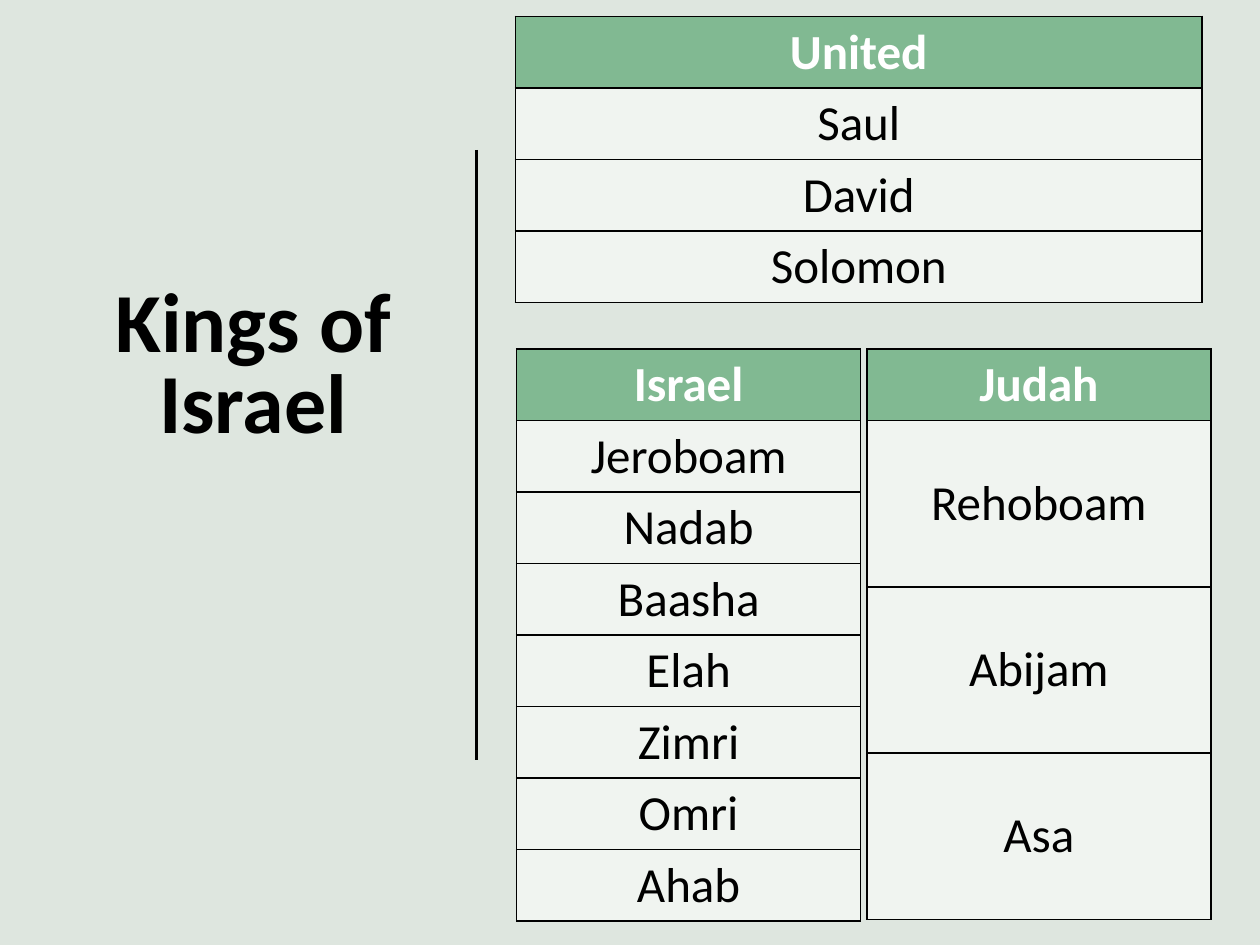
from dataclasses import dataclass

from lxml import etree
from pptx import Presentation
from pptx.dml.color import RGBColor
from pptx.enum.shapes import MSO_CONNECTOR
from pptx.enum.text import MSO_ANCHOR, MSO_AUTO_SIZE, PP_ALIGN
from pptx.oxml import parse_xml
from pptx.oxml.ns import nsdecls, qn
from pptx.slide import Slide
from pptx.util import Inches, Pt

STRAIGHT = MSO_CONNECTOR.STRAIGHT
MIDDLE = MSO_ANCHOR.MIDDLE
TOP = MSO_ANCHOR.TOP
GROW = MSO_AUTO_SIZE.SHAPE_TO_FIT_TEXT
CENTER = PP_ALIGN.CENTER


@dataclass(frozen=True)
class Theme:
    font: str = "Calibri"
    back: str = "DEE6DF"
    head: str = "81B992"
    body: str = "F0F4F0"
    ink: str = "000000"
    white: str = "FFFFFF"
    title: int = 48
    text: int = 28
    rule: float = 1.5
    edge: float = 1


@dataclass(frozen=True)
class Reign:
    left: float
    top: float
    width: float
    name: str
    kings: tuple[str, ...]
    row: float = 0.56
    anchor: MSO_ANCHOR = TOP


THEME = Theme()
HEAD = 0.56
REIGNS = (
    Reign(4.1, 2.77, 2.73, "Israel",
          ("Jeroboam", "Nadab", "Baasha", "Elah", "Zimri", "Omri", "Ahab")),
    Reign(4.09, 0.13, 5.45, "United", ("Saul", "David", "Solomon")),
    Reign(6.88, 2.77, 2.73, "Judah", ("Rehoboam", "Abijam", "Asa"), 1.32, MIDDLE),
)


def style(para, size: int, color: str, bold: bool) -> None:
    para.alignment = CENTER
    for run in para.runs:
        run.font.name = THEME.font
        run.font.size = Pt(size)
        run.font.bold = bold
        run.font.color.rgb = RGBColor.from_string(color)


def frame(cell) -> None:
    props = cell._tc.get_or_add_tcPr()
    for spot, side in enumerate("LRTB"):
        props.insert(spot, parse_xml(
            f'<a:ln{side} {nsdecls("a")} w="{Pt(THEME.edge)}"><a:solidFill>'
            f'<a:srgbClr val="{THEME.ink}"/></a:solidFill></a:ln{side}>'))


def add_title(slide: Slide, text: str) -> None:
    title = slide.shapes.title
    title.left, title.top = Inches(0.26), Inches(2.22)
    title.width, title.height = Inches(3.5), Inches(1.41)
    box = title.text_frame
    box.text = text
    box.word_wrap = True
    box.auto_size = GROW
    box.vertical_anchor = MIDDLE
    para = box.paragraphs[0]
    para.line_spacing = 0.8
    style(para, THEME.title, THEME.ink, True)


def add_rule(slide: Slide) -> None:
    x = Inches(3.78)
    rule = slide.shapes.add_connector(STRAIGHT, x, Inches(1.19), x, Inches(6.03))
    rule.line.color.rgb = RGBColor.from_string(THEME.ink)
    rule.line.width = Pt(THEME.rule)
    etree.SubElement(rule._element.spPr, qn("a:effectLst"))


def add_reign(slide: Slide, reign: Reign) -> None:
    names = (reign.name, *reign.kings)
    height = HEAD + reign.row * len(reign.kings)
    table = slide.shapes.add_table(
        len(names), 1, Inches(reign.left), Inches(reign.top),
        Inches(reign.width), Inches(height)).table
    table.horz_banding = False
    for index, name in enumerate(names):
        first = index == 0
        table.rows[index].height = Inches(HEAD if first else reign.row)
        cell = table.cell(index, 0)
        cell.text_frame.text = name
        cell.vertical_anchor = TOP if first else reign.anchor
        cell.fill.solid()
        cell.fill.fore_color.rgb = RGBColor.from_string(
            THEME.head if first else THEME.body)
        frame(cell)
        style(cell.text_frame.paragraphs[0], THEME.text,
              THEME.white if first else THEME.ink, first)


def main() -> None:
    deck = Presentation()
    deck.slide_width, deck.slide_height = Inches(10), Inches(7.5)
    slide = deck.slides.add_slide(deck.slide_layouts.get_by_name("Title Only"))
    slide.background.fill.solid()
    slide.background.fill.fore_color.rgb = RGBColor.from_string(THEME.back)
    add_title(slide, "Kings of Israel")
    add_rule(slide)
    for reign in REIGNS:
        add_reign(slide, reign)
    deck.save("out.pptx")


if __name__ == "__main__":
    main()
